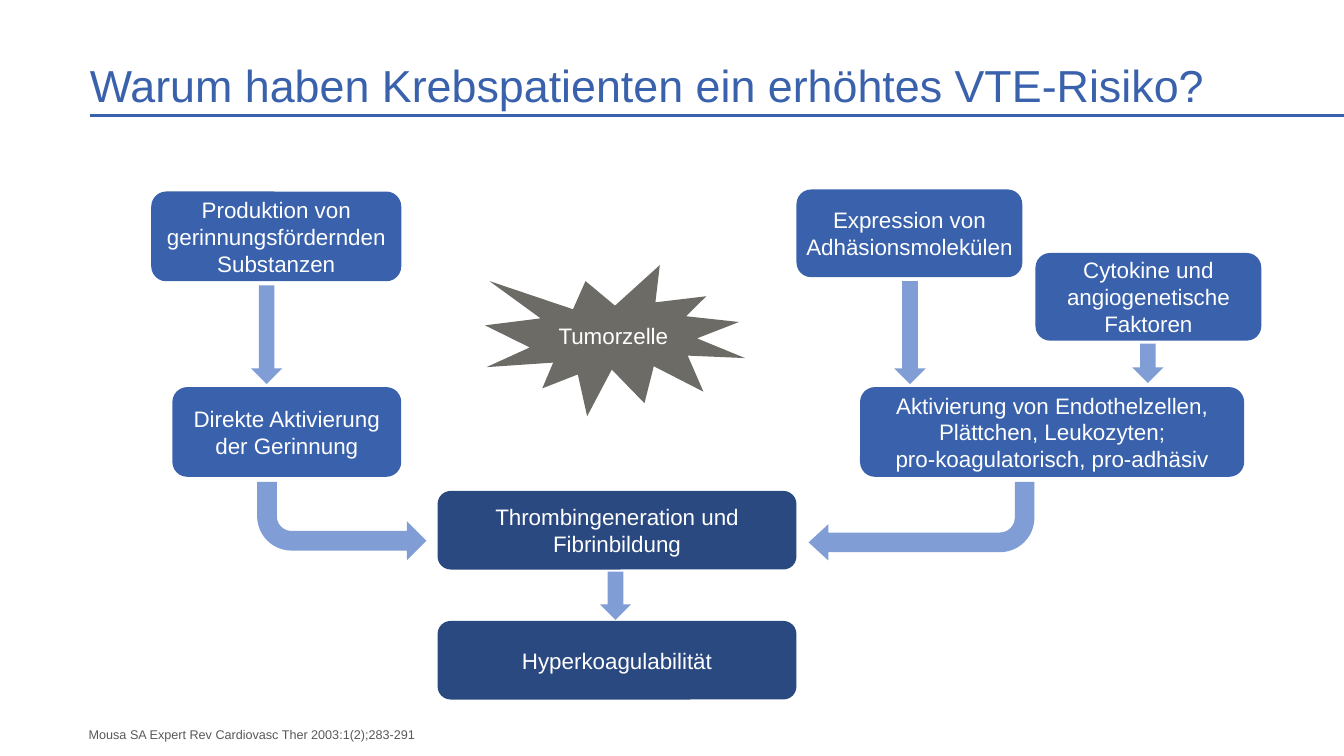
"""Build a slide on why cancer patients have a raised VTE risk."""
from dataclasses import dataclass

from lxml import etree
from pptx import Presentation
from pptx.dml.color import RGBColor
from pptx.enum.shapes import MSO_CONNECTOR, MSO_SHAPE
from pptx.enum.text import MSO_ANCHOR, MSO_AUTO_SIZE, PP_ALIGN
from pptx.oxml.ns import qn
from pptx.util import Inches, Pt

ROUNDED = MSO_SHAPE.ROUNDED_RECTANGLE
BURST = MSO_SHAPE.EXPLOSION1
DOWN = MSO_SHAPE.DOWN_ARROW
BENT = MSO_SHAPE.BENT_ARROW
STRAIGHT = MSO_CONNECTOR.STRAIGHT
LEFT, CENTER = PP_ALIGN.LEFT, PP_ALIGN.CENTER
MIDDLE, BOTTOM = MSO_ANCHOR.MIDDLE, MSO_ANCHOR.BOTTOM
NO_AUTOFIT = MSO_AUTO_SIZE.NONE


@dataclass(frozen=True)
class Theme:
    font: str = "Arial"
    blue: str = "3961AC"
    navy: str = "2B4981"
    arrow: str = "809ED5"
    tumor: str = "6D6B66"
    white: str = "FFFFFF"
    source: str = "595959"
    title_size: int = 32
    box_size: int = 16
    source_size: int = 9


THEME = Theme()


def write(box, text, size=THEME.box_size, color=THEME.white, align=CENTER, anchor=MIDDLE):
    frame = box.text_frame
    frame.auto_size = NO_AUTOFIT
    frame.word_wrap = True
    frame.vertical_anchor = anchor
    frame.margin_left = frame.margin_right = frame.margin_top = frame.margin_bottom = 0
    para = frame.paragraphs[0]
    para.alignment = align
    for index, line in enumerate(text.split("\n")):
        if index:
            para.add_line_break()
        span = para.add_run()
        span.text = line
        span.font.name = THEME.font
        span.font.size = Pt(size)
        span.font.color.rgb = RGBColor.from_string(color)


def draw(page, kind, place, color):
    shape = page.shapes.add_shape(kind, *map(Inches, place))
    shape.shadow.inherit = False
    shape.fill.solid()
    shape.fill.fore_color.rgb = RGBColor.from_string(color)
    shape.line.fill.background()
    return shape


deck = Presentation()
deck.slide_width, deck.slide_height = Inches(13.33), Inches(7.5)
page = deck.slides.add_slide(deck.slide_layouts[5])

rule = page.shapes.add_connector(STRAIGHT, Inches(0.89), Inches(1.15), Inches(13.33), Inches(1.15))
rule.line.color.rgb = RGBColor.from_string(THEME.blue)
rule.line.width = Pt(2.25)
etree.SubElement(rule.element.spPr, qn("a:effectLst"))

title = page.shapes.title
title.left, title.top, title.width, title.height = map(Inches, (0.89, 0.57, 12.08, 0.54))
write(title, "Warum haben Krebspatienten ein erhöhtes VTE-Risiko?",
      size=THEME.title_size, color=THEME.blue, align=LEFT, anchor=BOTTOM)

steps = [
    (ROUNDED, (1.5, 1.9, 2.48, 0.89), THEME.blue, "Produktion von gerinnungsfördernden Substanzen"),
    (BURST, (4.81, 2.63, 2.58, 1.5), THEME.tumor, "Tumorzelle"),
    (ROUNDED, (1.71, 3.84, 2.27, 0.89), THEME.blue, "Direkte Aktivierung der Gerinnung"),
    (ROUNDED, (8.53, 3.84, 3.81, 0.89), THEME.blue,
     "Aktivierung von Endothelzellen, Plättchen, Leukozyten;\npro-koagulatorisch, pro-adhäsiv"),
    (ROUNDED, (10.27, 2.51, 2.24, 0.87), THEME.blue, "Cytokine und angiogenetische Faktoren"),
    (ROUNDED, (7.9, 1.88, 2.24, 0.87), THEME.blue, "Expression von Adhäsionsmolekülen"),
    (ROUNDED, (4.34, 4.87, 3.56, 0.78), THEME.navy, "Thrombingeneration und Fibrinbildung"),
    (ROUNDED, (4.34, 6.16, 3.56, 0.78), THEME.navy, "Hyperkoagulabilität"),
]
for kind, place, color, text in steps:
    write(draw(page, kind, place, color), text)

for left, top, height in [(2.49, 2.83, 0.98), (8.87, 2.79, 1.02), (11.23, 3.41, 0.39), (5.95, 5.67, 0.48)]:
    draw(page, DOWN, (left, top, 0.31, height), THEME.arrow)

left_bend = draw(page, BENT, (2.55, 4.78, 1.68, 0.78), THEME.arrow)
left_bend.element.spPr.find(qn("a:xfrm")).set("flipV", "1")
right_bend = draw(page, BENT, (8.02, 4.78, 2.24, 0.78), THEME.arrow)
right_bend.rotation = 180
for index, value in enumerate((0.25, 0.23, 0.25, 0.44)):
    right_bend.adjustments[index] = value

source = page.shapes.add_textbox(*map(Inches, (0.88, 7.21, 9.84, 0.15)))
write(source, "Mousa SA Expert Rev Cardiovasc Ther 2003:1(2);283-291",
      size=THEME.source_size, color=THEME.source, align=LEFT, anchor=BOTTOM)

deck.save("out.pptx")
